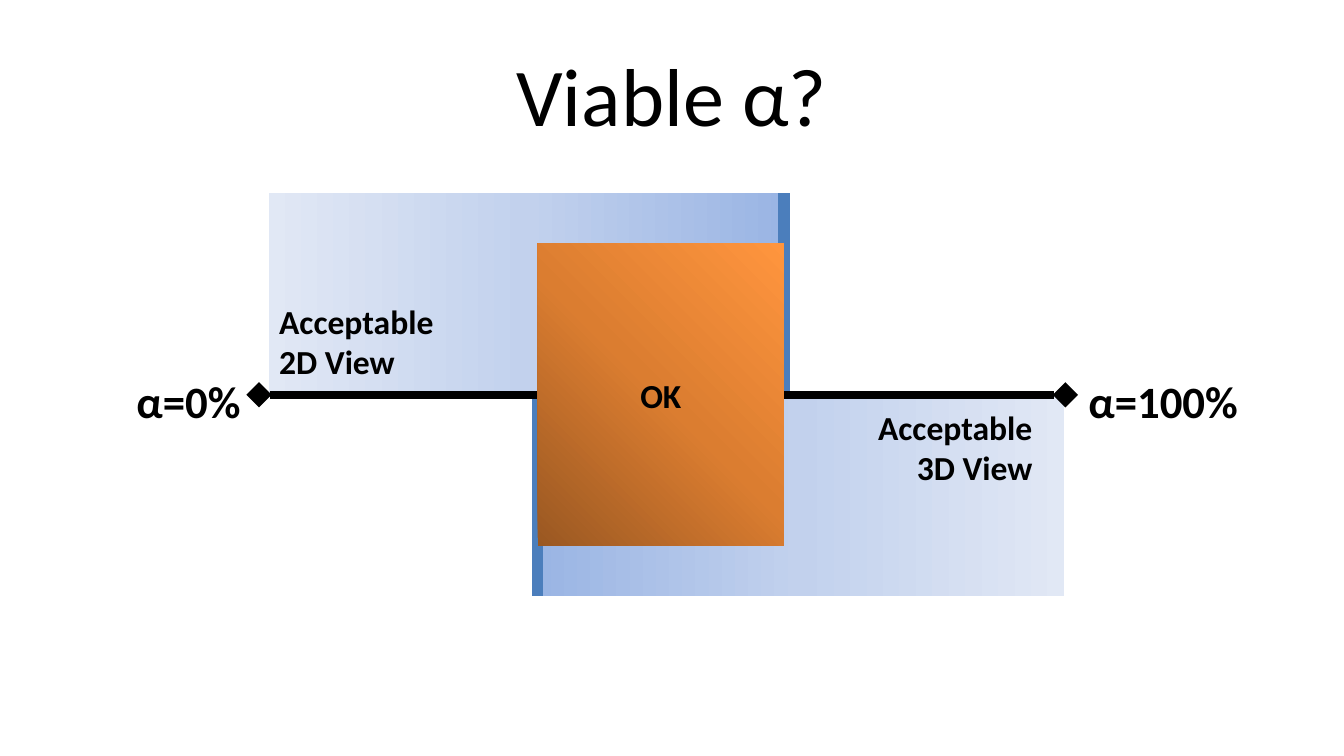
from copy import deepcopy

from lxml import etree
from pptx import Presentation
from pptx.dml.color import RGBColor
from pptx.enum.shapes import MSO_CONNECTOR, MSO_SHAPE
from pptx.enum.text import MSO_ANCHOR, PP_ALIGN
from pptx.oxml.ns import qn
from pptx.util import Pt

PX = 9525  # EMU per px, 96 px to the inch
FONT = "Calibri"
BLACK = RGBColor(0x00, 0x00, 0x00)
EDGE_BLUE = RGBColor(0x4B, 0x7E, 0xBC)
BLUES = [RGBColor(0x9A, 0xB5, 0xE4), RGBColor(0xC2, 0xD1, 0xED), RGBColor(0xE1, 0xE8, 0xF5)]
ORANGES = [RGBColor(0x9A, 0x58, 0x22), RGBColor(0xDB, 0x7D, 0x30), RGBColor(0xFF, 0x95, 0x3E)]
LEFT, CENTER, RIGHT = PP_ALIGN.LEFT, PP_ALIGN.CENTER, PP_ALIGN.RIGHT
MIDDLE, TOP = MSO_ANCHOR.MIDDLE, MSO_ANCHOR.TOP
RECTANGLE = MSO_SHAPE.RECTANGLE
STRAIGHT = MSO_CONNECTOR.STRAIGHT

presentation = Presentation()
presentation.slide_width = 960 * PX
presentation.slide_height = 540 * PX
slide = presentation.slides.add_slide(presentation.slide_layouts[5])


def write(shape, text, size, bold, alignment, anchor):
    frame = shape.text_frame
    frame.text = text
    frame.vertical_anchor = anchor
    for paragraph in frame.paragraphs:
        paragraph.alignment = alignment
        for run in paragraph.runs:
            run.font.name = FONT
            run.font.size = Pt(size)
            run.font.bold = bold
            run.font.color.rgb = BLACK


def add_line(x1, y1, x2, y2, color, width):
    line = slide.shapes.add_connector(STRAIGHT, x1 * PX, y1 * PX, x2 * PX, y2 * PX)
    line.line.color.rgb = color
    line.line.width = Pt(width)
    etree.SubElement(line._element.spPr, qn("a:effectLst"))
    return line


# Title
title = slide.shapes.title
title.left, title.top, title.width, title.height = 48 * PX, 22 * PX, 864 * PX, 90 * PX
write(title, "Viable α?", 44, False, CENTER, MIDDLE)

# Gradient ranges, each with an optional blue limit line; angles run counter-clockwise
ranges = [
    (384, 282, 376, 144, BLUES, 0, 384),    # acceptable 3D view
    (192, 138, 368, 144, BLUES, 180, 560),  # acceptable 2D view
    (384, 174, 176, 216, ORANGES, 45, None),  # overlap
]
for x, y, width, height, colors, angle, limit_x in ranges:
    panel = slide.shapes.add_shape(RECTANGLE, x * PX, y * PX, width * PX, height * PX)
    panel.shadow.inherit = False
    panel.line.fill.background()
    panel.fill.gradient()
    panel.fill.gradient_angle = angle
    stop_list = panel._element.spPr.find(".//" + qn("a:gsLst"))
    stop_list.append(deepcopy(stop_list[-1]))
    for stop, color, position in zip(panel.fill.gradient_stops, colors, (0, 0.5, 1)):
        stop.color.rgb = color
        stop.position = position
    if limit_x is not None:
        add_line(limit_x, y, limit_x, y + height, EDGE_BLUE, 6)
overlap = panel
write(overlap, "OK", 18, True, CENTER, MIDDLE)

# Alpha axis with diamond ends, passing behind the overlap
axis = add_line(185, 282, 761, 282, BLACK, 4.5)
line_properties = axis.line._get_or_add_ln()
for end in ("a:headEnd", "a:tailEnd"):
    etree.SubElement(line_properties, qn(end), type="diamond")
overlap._element.addprevious(axis._element)

# Axis and range labels
labels = [
    ("α=0%", 88, 262, 144, 48, 24, LEFT, True),
    ("α=100%", 768, 262, 144, 48, 24, LEFT, True),
    ("Acceptable\n2D View", 190, 210, 131, 68, 18, LEFT, False),
    ("Acceptable\n3D View", 616, 286, 131, 68, 18, RIGHT, False),
]
for text, x, y, width, height, size, alignment, wrap in labels:
    label = slide.shapes.add_textbox(x * PX, y * PX, width * PX, height * PX)
    label.text_frame.word_wrap = wrap
    write(label, text, size, True, alignment, TOP)

presentation.save("out.pptx")
